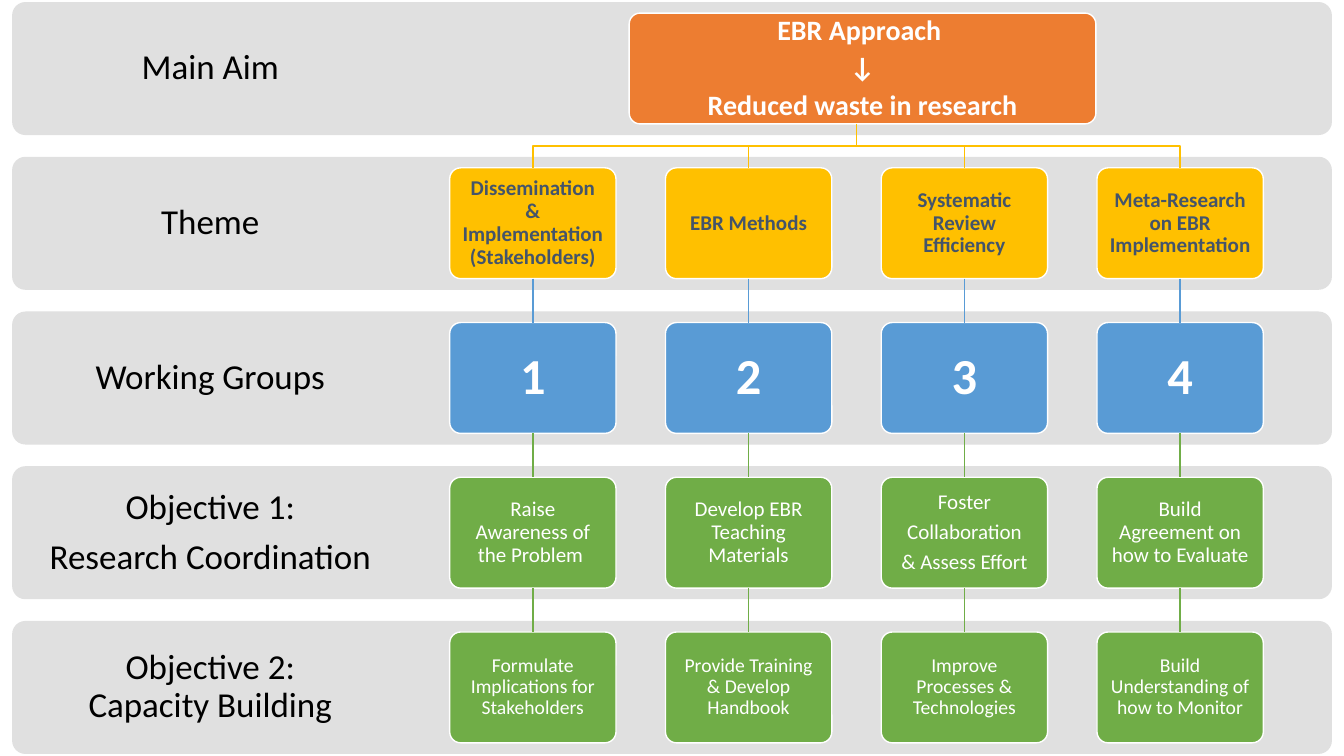
from pptx import Presentation
from pptx import util as u
from pptx.dml.color import RGBColor
from pptx.enum import shapes, text
from pptx.oxml.ns import qn
from lxml import etree

WHITE = RGBColor(0xFF, 0xFF, 0xFF)
BLACK = RGBColor(0, 0, 0)
GRAY = RGBColor(0xE0, 0xE0, 0xE0)
ORANGE = RGBColor(0xED, 0x7D, 0x31)
GOLD = RGBColor(0xFF, 0xC0, 0x00)
SLATE = RGBColor(0x44, 0x54, 0x6A)
BLUE = RGBColor(0x59, 0x9B, 0xD5)
GREEN = RGBColor(0x70, 0xAD, 0x47)

TOP, PITCH, BAND, PAD, TALL = 0.02, 1.535, 1.32, 0.11, 1.1
LEFT, STEP, WIDE = 4.46, 2.14, 1.65
HUB = LEFT + 1.5 * STEP + WIDE / 2

LABELS = [
    (["Main Aim"], 0),
    (["Theme"], 0),
    (["Working Groups"], 0),
    (["Objective 1:", "Research Coordination"], 8.8),
    (["Objective 2:", "Capacity Building"], 0),
]
AIM = ["EBR Approach ", "↓", "Reduced waste in research"]
ROWS = [
    (GOLD, SLATE, 15, True, [
        (["Dissemination & Implementation", "(Stakeholders)"], 0),
        (["EBR Methods"], 0),
        (["Systematic Review Efficiency"], 0),
        (["Meta-Research on EBR Implementation"], 0)]),
    (BLUE, WHITE, 36, True, [([str(n)], 0) for n in range(1, 5)]),
    (GREEN, WHITE, 15, False, [
        (["Raise Awareness of the Problem "], 0),
        (["Develop EBR Teaching Materials"], 0),
        (["Foster", "Collaboration", "& Assess Effort"], 5.2),
        (["Build Agreement on how to Evaluate"], 0)]),
    (GREEN, WHITE, 14, False, [
        (["Formulate Implications for Stakeholders"], 0),
        (["Provide Training", "& Develop Handbook"], 0),
        (["Improve Processes & Technologies"], 0),
        (["Build Understanding of how to Monitor"], 0)]),
]


class Chart:
    font = "Calibri"
    line = u.Pt(1)

    def __init__(self, slide):
        self.shapes = slide.shapes

    def words(self, shape, lines, size, color, bold=False, gap=0, inset=0.09):
        frame = shape.text_frame
        frame.word_wrap = True
        frame.vertical_anchor = text.MSO_ANCHOR.MIDDLE
        frame.margin_left = frame.margin_right = u.Inches(inset)
        frame.margin_top = frame.margin_bottom = u.Inches(inset)
        for i, line in enumerate(lines):
            para = frame.add_paragraph() if i else frame.paragraphs[0]
            para.alignment = text.PP_ALIGN.CENTER
            para.line_spacing = 0.9
            para.space_before = u.Pt(gap if i else 0)
            run = para.add_run()
            run.text = line
            run.font.name = self.font
            run.font.size = u.Pt(size)
            run.font.bold = bold
            run.font.color.rgb = color

    def panel(self, x, y, w, h, fill, edge=None):
        shape = self.shapes.add_shape(
            shapes.MSO_SHAPE.ROUNDED_RECTANGLE,
            u.Inches(x), u.Inches(y), u.Inches(w), u.Inches(h))
        shape.adjustments[0] = 0.1
        shape.shadow.inherit = False
        shape.fill.solid()
        shape.fill.fore_color.rgb = fill
        if edge is None:
            shape.line.fill.background()
        else:
            shape.line.color.rgb = edge
            shape.line.width = self.line
        return shape

    def label(self, y, lines, gap):
        box = self.shapes.add_textbox(
            u.Inches(0.12), u.Inches(y), u.Inches(3.93), u.Inches(BAND))
        self.words(box, lines, 25, BLACK, gap=gap, inset=0.19)

    def branch(self, x, top, end):
        mid = u.Inches((top + end) / 2)
        trace = self.shapes.build_freeform(u.Inches(HUB), u.Inches(top))
        trace.add_line_segments(
            [(u.Inches(HUB), mid), (u.Inches(x), mid),
             (u.Inches(x), u.Inches(end))], close=False)
        shape = trace.convert_to_shape()
        shape.shadow.inherit = False
        shape.fill.background()
        shape.line.color.rgb = GOLD
        shape.line.width = self.line

    def link(self, upper, lower, color):
        wire = self.shapes.add_connector(
            shapes.MSO_CONNECTOR.STRAIGHT, 0, 0, 0, 0)
        wire.begin_connect(upper, 2)
        wire.end_connect(lower, 0)
        wire.line.color.rgb = color
        wire.line.width = self.line
        etree.SubElement(wire._element.spPr, qn("a:effectLst"))


def main():
    deck = Presentation()
    deck.slide_width = u.Inches(13.33)
    deck.slide_height = u.Inches(7.5)
    chart = Chart(deck.slides.add_slide(deck.slide_layouts[6]))

    for i, (lines, gap) in enumerate(LABELS):
        y = TOP + i * PITCH
        chart.panel(0.12, y, 13.09, BAND, GRAY)
        chart.label(y, lines, gap)

    first = TOP + PAD
    aim = chart.panel(6.24, first, 4.63, TALL, ORANGE, WHITE)
    chart.words(aim, AIM, 20, WHITE, True, 5.2)

    above = []
    for i, (fill, ink, size, bold, cells) in enumerate(ROWS, 1):
        y = first + i * PITCH
        row = []
        for j, (lines, gap) in enumerate(cells):
            x = LEFT + j * STEP
            box = chart.panel(x, y, WIDE, TALL, fill, WHITE)
            chart.words(box, lines, size, ink, bold, gap)
            if above:
                chart.link(above[j], box, fill)
            else:
                chart.branch(x + WIDE / 2, first + TALL, y)
            row.append(box)
        above = row

    deck.save("out.pptx")


if __name__ == "__main__":
    main()
